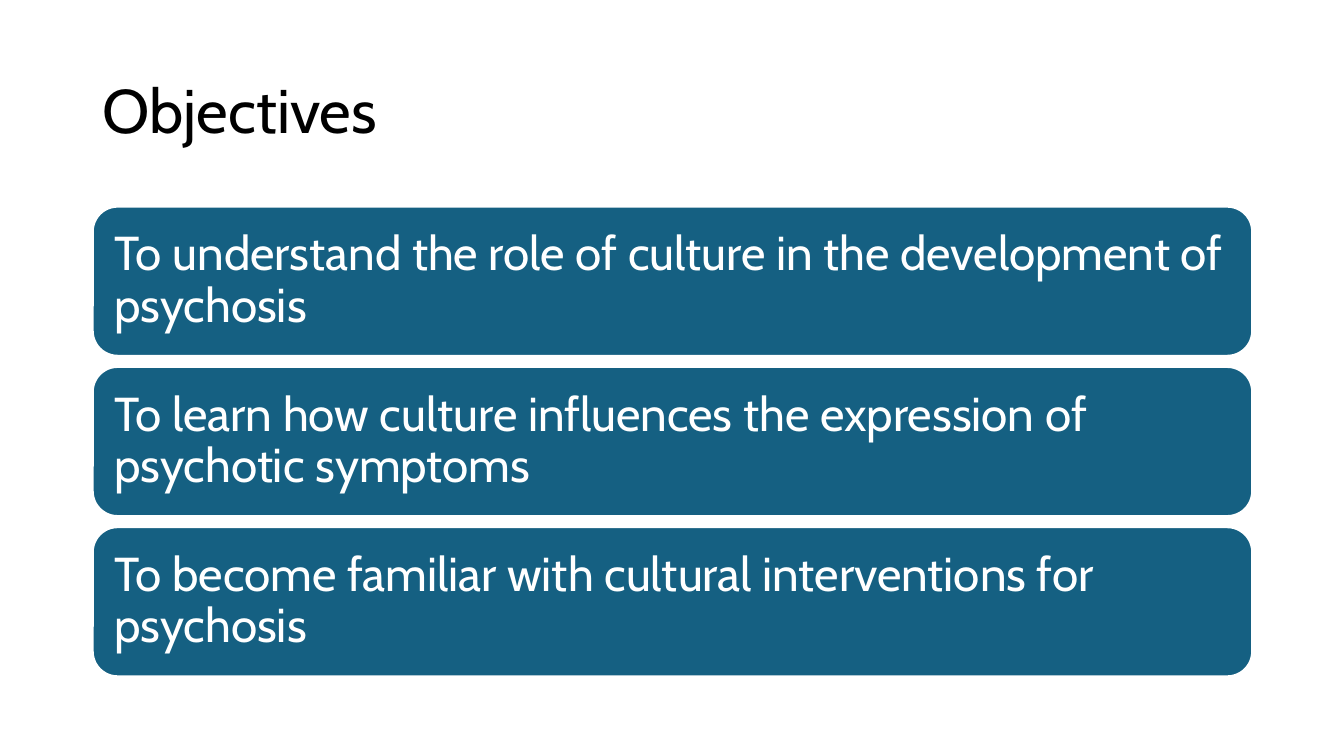
from dataclasses import dataclass

from pptx import Presentation
from pptx.dml.color import RGBColor
from pptx.enum.shapes import MSO_SHAPE as Shape
from pptx.enum.text import MSO_ANCHOR as Anchor, PP_ALIGN as Align
from pptx.slide import Slide
from pptx.text.text import TextFrame
from pptx.util import Pt

EMU_PER_PX = 9144


@dataclass(frozen=True)
class Theme:
    font: str = "Cabin"
    title_color: RGBColor = RGBColor(0x00, 0x00, 0x00)
    card_fill: RGBColor = RGBColor(0x15, 0x60, 0x82)
    card_text: RGBColor = RGBColor(0xFF, 0xFF, 0xFF)
    card_line: RGBColor = RGBColor(0xFF, 0xFF, 0xFF)
    title_size: int = 44
    card_size: int = 34
    line_width: float = 1.5
    line_spacing: float = 0.9


@dataclass(frozen=True)
class Box:
    left: int
    top: int
    width: int
    height: int

    def emu(self) -> tuple[int, int, int, int]:
        return px(self.left), px(self.top), px(self.width), px(self.height)


@dataclass(frozen=True)
class Objective:
    text: str
    box: Box


THEME = Theme()
LEFT, WIDTH = 92, 1150
CARD_TOP, CARD_HEIGHT, CARD_PITCH = 205, 148, 159
OBJECTIVES = [
    Objective(text, Box(LEFT, CARD_TOP + i * CARD_PITCH, WIDTH, CARD_HEIGHT))
    for i, text in enumerate([
        "To understand the role of culture in the development of psychosis",
        "To learn how culture influences the expression of psychotic symptoms",
        "To become familiar with cultural interventions for psychosis",
    ])
]


def px(n: int) -> int:
    return n * EMU_PER_PX


def write(tf: TextFrame, text: str, size: int, color: RGBColor, inset: int) -> None:
    tf.text = text
    tf.word_wrap = True
    tf.vertical_anchor = Anchor.MIDDLE
    tf.margin_left = tf.margin_right = px(inset)
    tf.margin_top = tf.margin_bottom = px(inset)
    p = tf.paragraphs[0]
    p.alignment = Align.LEFT
    p.line_spacing = THEME.line_spacing
    font = p.runs[0].font
    font.name = THEME.font
    font.size = Pt(size)
    font.color.rgb = color


def add_title(s: Slide, text: str, box: Box) -> None:
    sp = s.shapes.add_textbox(*box.emu())
    write(sp.text_frame, text, THEME.title_size, THEME.title_color, 10)


def add_objective(s: Slide, objective: Objective) -> None:
    sp = s.shapes.add_shape(Shape.ROUNDED_RECTANGLE, *objective.box.emu())
    sp.shadow.inherit = False
    sp.fill.solid()
    sp.fill.fore_color.rgb = THEME.card_fill
    sp.line.color.rgb = THEME.card_line
    sp.line.width = Pt(THEME.line_width)
    write(sp.text_frame, objective.text, THEME.card_size, THEME.card_text, 14)


def main() -> None:
    prs = Presentation()
    prs.slide_width, prs.slide_height = px(1333), px(750)
    s = prs.slides.add_slide(prs.slide_layouts[6])
    add_title(s, "Objectives", Box(LEFT, 40, WIDTH, 145))
    for objective in OBJECTIVES:
        add_objective(s, objective)
    prs.save("out.pptx")


if __name__ == "__main__":
    main()
